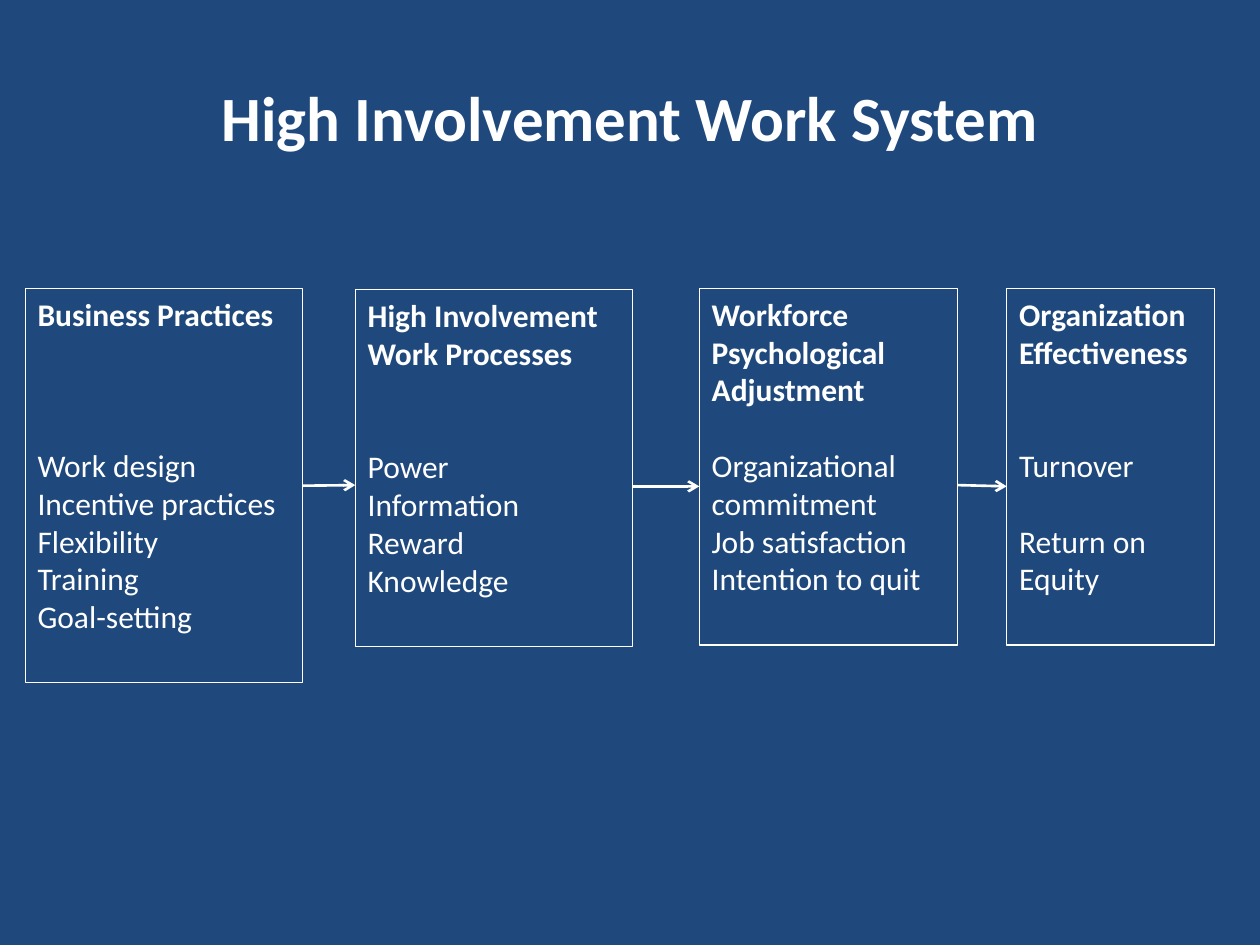
from lxml import etree
from pptx import Presentation
from pptx.dml.color import RGBColor
from pptx.enum.shapes import MSO_CONNECTOR as CONN, MSO_SHAPE as SHAPE
from pptx.enum.text import MSO_ANCHOR as ANCHOR, PP_ALIGN as ALIGN
from pptx.oxml.ns import qn
from pptx.util import Inches, Pt

COLORS = {"background": "1F497D", "ink": "FFFFFF"}
INK = RGBColor.from_string(COLORS["ink"])
LINE_PITCH = 21.6  # points per line of 18 pt text
HEADING = {"name": "Calibri", "size": Pt(18), "bold": True}
ITEM = {**HEADING, "bold": False}
TITLE = {**HEADING, "size": Pt(36)}


def write(p, text, font):
    r = p.add_run()
    r.text = text
    r.font.color.rgb = INK
    for name, value in font.items():
        setattr(r.font, name, value)


prs = Presentation()
prs.slide_width, prs.slide_height = Inches(10), Inches(7.5)
s = prs.slides.add_slide(prs.slide_layouts[6])
s.background.fill.solid()
s.background.fill.fore_color.rgb = RGBColor.from_string(COLORS["background"])

# Title
tf = s.shapes.add_textbox(Inches(0.5), Inches(0.3), Inches(9), Inches(1.25)).text_frame
tf.word_wrap = True
tf.vertical_anchor = ANCHOR.MIDDLE
tf.paragraphs[0].alignment = ALIGN.CENTER
write(tf.paragraphs[0], "High Involvement Work System", TITLE)

# Stages: left, top, width, height, headings, items as (lines of space before, text)
stages = [
    (0.2, 2.29, 2.2, 3.13, ["Business Practices"],
     [(3, "Work design"), (0, "Incentive practices"), (0, "Flexibility"),
      (0, "Training"), (0, "Goal-setting")]),
    (2.82, 2.3, 2.2, 2.83, ["High Involvement Work Processes"],
     [(2, "Power"), (0, "Information"), (0, "Reward"), (0, "Knowledge")]),
    (5.55, 2.29, 2.05, 2.83, ["Workforce", "Psychological Adjustment"],
     [(1, "Organizational commitment"), (0, "Job satisfaction"),
      (0, "Intention to quit")]),
    (7.99, 2.29, 1.65, 2.83, ["Organization Effectiveness"],
     [(2, "Turnover"), (1, "Return on Equity")]),
]
boxes = []
for left, top, width, height, headings, items in stages:
    sp = s.shapes.add_shape(SHAPE.RECTANGLE, Inches(left), Inches(top),
                            Inches(width), Inches(height))
    sp.shadow.inherit = False
    sp.fill.background()
    sp.line.color.rgb = INK
    sp.line.width = Pt(0.75)
    tf = sp.text_frame
    tf.word_wrap = True
    tf.vertical_anchor = ANCHOR.TOP
    lines = [(0, text, HEADING) for text in headings]
    lines += [(gap, text, ITEM) for gap, text in items]
    for i, (gap, text, font) in enumerate(lines):
        p = tf.add_paragraph() if i else tf.paragraphs[0]
        p.alignment = ALIGN.LEFT
        p.space_before = Pt(gap * LINE_PITCH)
        write(p, text, font)
    boxes.append(sp)

# Arrows from each stage to the next
arrows = []
for source, target, y1, y2 in zip(boxes, boxes[1:], (3.85, 3.86, 3.85), (3.85, 3.86, 3.86)):
    arrow = s.shapes.add_connector(CONN.STRAIGHT, source.left + source.width,
                                   Inches(y1), target.left, Inches(y2))
    arrow.line.color.rgb = INK
    arrow.line.width = Pt(1.5)
    etree.SubElement(arrow.line._get_or_add_ln(), qn("a:tailEnd"), type="arrow")
    etree.SubElement(arrow._element.spPr, qn("a:effectLst"))
    arrows.append(arrow)
# Only the first arrow starts at the middle of a box side
arrows[0].begin_connect(boxes[0], 3)

prs.save("out.pptx")
